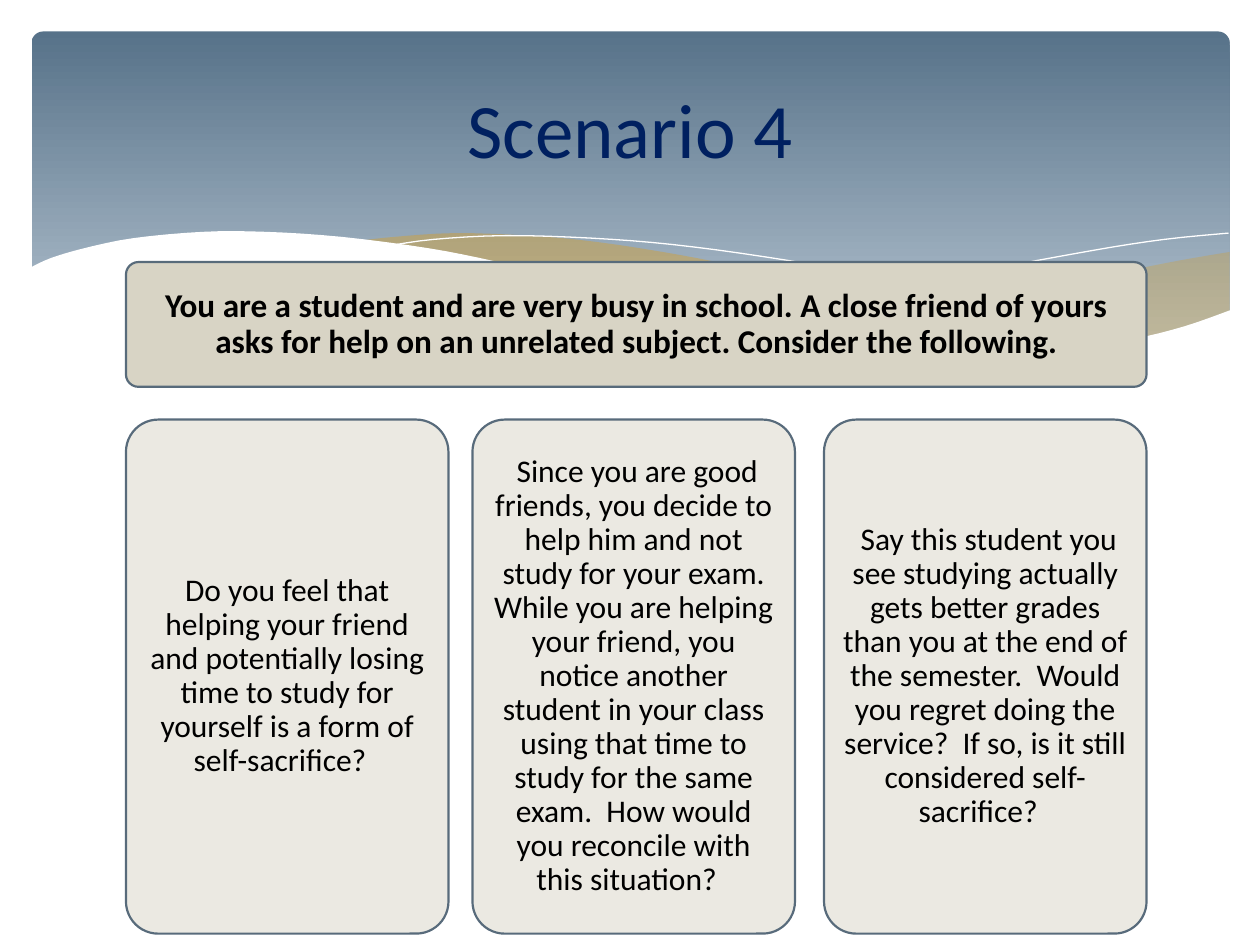
import dataclasses
import typing

import lxml.etree
import pptx
import pptx.dml.color
import pptx.enum.shapes
import pptx.enum.text
import pptx.oxml.ns
import pptx.util

Inches = pptx.util.Inches
Point = tuple[float, float]


@dataclasses.dataclass(frozen=True)
class Theme:
    font: str = "Calibri"
    sky_top: str = "577289"
    sky_bottom: str = "B2C1CE"
    gold: str = "DC9E1F"
    white: str = "FFFFFF"
    title: str = "002060"
    text: str = "000000"
    banner: str = "D8D4C5"
    card: str = "EBE9E2"
    border: str = "586B7B"
    border_width: float = 1.25
    title_size: float = 44
    banner_size: float = 19
    card_size: float = 18


THEME = Theme()


@dataclasses.dataclass(frozen=True)
class Wave:
    edges: tuple[tuple[Point, ...], ...]
    fill: str | None = None
    opacity: int = 100


@dataclasses.dataclass(frozen=True)
class Panel:
    left: float
    top: float
    width: float
    height: float
    inset: float
    fill: str
    size: float
    text: str
    bold: bool = False


WAVES = (
    Wave((
        ((9.76, 2), (9.35, 2.07), (8.91, 2.16), (8.32, 2.3), (7.53, 2.48), (6.61, 2.65)),
        ((6.61, 2.65), (7.19, 2.72), (7.69, 2.77), (8.14, 2.78), (8.63, 2.75),
         (9.05, 2.69), (9.42, 2.59), (9.76, 2.47)),
    ), THEME.gold, 29),
    Wave((
        ((8.93, 2.73), (8.37, 2.65), (7.75, 2.54), (7.06, 2.4), (6.29, 2.22), (5.69, 2.08),
         (5.14, 1.98), (4.65, 1.91), (4.2, 1.87), (3.61, 1.85), (3.13, 1.88), (2.86, 1.91)),
        ((2.86, 1.91), (3.42, 1.99), (4.04, 2.11), (4.91, 2.32), (5.66, 2.48), (6.34, 2.61),
         (6.95, 2.7), (7.48, 2.76), (7.96, 2.78), (8.38, 2.78), (8.93, 2.73)),
    ), THEME.gold, 40),
    Wave((
        ((3.09, 1.95), (3.44, 1.9), (4.01, 1.87), (4.69, 1.89), (5.33, 1.94), (6.08, 2.04),
         (6.95, 2.19), (7.95, 2.41), (9.07, 2.72)),
    )),
    Wave((
        ((6.13, 2.57), (6.95, 2.35), (7.76, 2.16), (8.66, 1.99), (9.24, 1.9), (9.75, 1.85)),
    )),
    Wave((
        ((9.77, 2.46), (9.4, 2.59), (8.99, 2.69), (8.5, 2.75), (8.09, 2.77), (7.44, 2.74),
         (6.68, 2.65), (5.79, 2.5), (5.03, 2.33), (4.47, 2.2), (3.91, 2.07), (3.4, 1.97),
         (2.71, 1.88), (2.11, 1.84), (1.61, 1.84), (1.06, 1.89), (0.67, 1.97), (0.4, 2.05),
         (0.23, 2.13)),
        ((0.23, 3.29), (9.77, 3.29)),
    ), THEME.white),
)

CARD_LEFTS = (1, 3.75, 6.54)
CARD_TEXTS = (
    "Do you feel that helping your friend and potentially losing time to study for "
    "yourself is a form of self-sacrifice?  ",
    " Since you are good friends, you decide to help him and not study for your exam. "
    "While you are helping your friend, you notice another student in your class using "
    "that time to study for the same exam.  How would you reconcile with this situation?  ",
    " Say this student you see studying actually gets better grades than you at the end "
    "of the semester.  Would you regret doing the service?  If so, is it still considered "
    "self-sacrifice?  ",
)
PANELS = (
    Panel(1, 2.08, 8.1, 0.99, 0.08, THEME.banner, THEME.banner_size,
          "You are a student and are very busy in school. A close friend of yours asks for "
          "help on an unrelated subject. Consider the following.", True),
    *(Panel(left, 3.33, 2.56, 4.08, 0.07, THEME.card, THEME.card_size, text)
      for left, text in zip(CARD_LEFTS, CARD_TEXTS)),
)


def rgb(value: str) -> pptx.dml.color.RGBColor:
    return pptx.dml.color.RGBColor.from_string(value)


def smooth(knots: tuple[Point, ...], steps: int = 4) -> typing.Iterator[Point]:
    padded = (knots[0], *knots, knots[-1])
    yield knots[0]
    for a, b, c, d in zip(padded, padded[1:], padded[2:], padded[3:]):
        for step in range(1, steps + 1):
            t = step / steps
            x, y = (
                q + t * (r - p) / 2 + t * t * (2 * p - 5 * q + 4 * r - s) / 2
                + t ** 3 * (3 * q - p - 3 * r + s) / 2
                for p, q, r, s in zip(a, b, c, d)
            )
            yield x, y


def draw_wave(page: pptx.slide.Slide, wave: Wave) -> None:
    points = [(Inches(x), Inches(y)) for edge in wave.edges for x, y in smooth(edge)]
    builder = page.shapes.build_freeform(*points[0])
    builder.add_line_segments(points[1:], close=wave.fill is not None)
    shape = builder.convert_to_shape()
    shape.shadow.inherit = False
    if wave.fill is None:
        shape.fill.background()
        shape.line.color.rgb = rgb(THEME.white)
        shape.line.width = pptx.util.Pt(0)
        return
    shape.line.fill.background()
    shape.fill.solid()
    shape.fill.fore_color.rgb = rgb(wave.fill)
    if wave.opacity < 100:
        color = shape.fill._xPr.find(".//" + pptx.oxml.ns.qn("a:srgbClr"))
        lxml.etree.SubElement(color, pptx.oxml.ns.qn("a:alpha"), val=str(wave.opacity * 1000))


def add_round_box(page: pptx.slide.Slide, left: float, top: float, width: float,
                  height: float, corner: float) -> pptx.shapes.autoshape.Shape:
    box = page.shapes.add_shape(
        pptx.enum.shapes.MSO_SHAPE.ROUNDED_RECTANGLE,
        Inches(left), Inches(top), Inches(width), Inches(height))
    box.adjustments[0] = corner
    box.shadow.inherit = False
    return box


def draw_sky(page: pptx.slide.Slide) -> None:
    sky = add_round_box(page, 0.25, 0.25, 9.51, 2.7, 0.034)
    sky.line.fill.background()
    sky.fill.gradient()
    sky.fill.gradient_angle = 270
    stops = ((0, THEME.sky_top), (0.9, THEME.sky_bottom))
    for stop, (position, color) in zip(sky.fill.gradient_stops, stops):
        stop.position = position
        stop.color.rgb = rgb(color)


def write_text(frame: pptx.text.text.TextFrame, text: str, size: float, color: str,
               bold: bool = False) -> None:
    frame.text = text
    frame.word_wrap = True
    frame.vertical_anchor = pptx.enum.text.MSO_ANCHOR.MIDDLE
    para = frame.paragraphs[0]
    para.alignment = pptx.enum.text.PP_ALIGN.CENTER
    font = para.runs[0].font
    font.name = THEME.font
    font.size = pptx.util.Pt(size)
    font.bold = bold
    font.color.rgb = rgb(color)


def draw_panel(page: pptx.slide.Slide, panel: Panel) -> None:
    box = add_round_box(page, panel.left, panel.top, panel.width, panel.height, 0.1)
    box.fill.solid()
    box.fill.fore_color.rgb = rgb(panel.fill)
    box.line.color.rgb = rgb(THEME.border)
    box.line.width = pptx.util.Pt(THEME.border_width)
    frame = box.text_frame
    frame.margin_left = frame.margin_right = Inches(panel.inset)
    frame.margin_top = frame.margin_bottom = Inches(panel.inset)
    write_text(frame, panel.text, panel.size, THEME.text, panel.bold)
    frame.paragraphs[0].line_spacing = 0.9


def main() -> None:
    deck = pptx.Presentation()
    deck.slide_width, deck.slide_height = Inches(10), Inches(7.5)
    page = deck.slides.add_slide(deck.slide_layouts[6])
    draw_sky(page)
    for wave in WAVES:
        draw_wave(page, wave)
    title = page.shapes.add_textbox(Inches(0.5), Inches(0.33), Inches(9), Inches(1.37))
    write_text(title.text_frame, "Scenario 4", THEME.title_size, THEME.title)
    for panel in PANELS:
        draw_panel(page, panel)
    deck.save("out.pptx")


if __name__ == "__main__":
    main()
